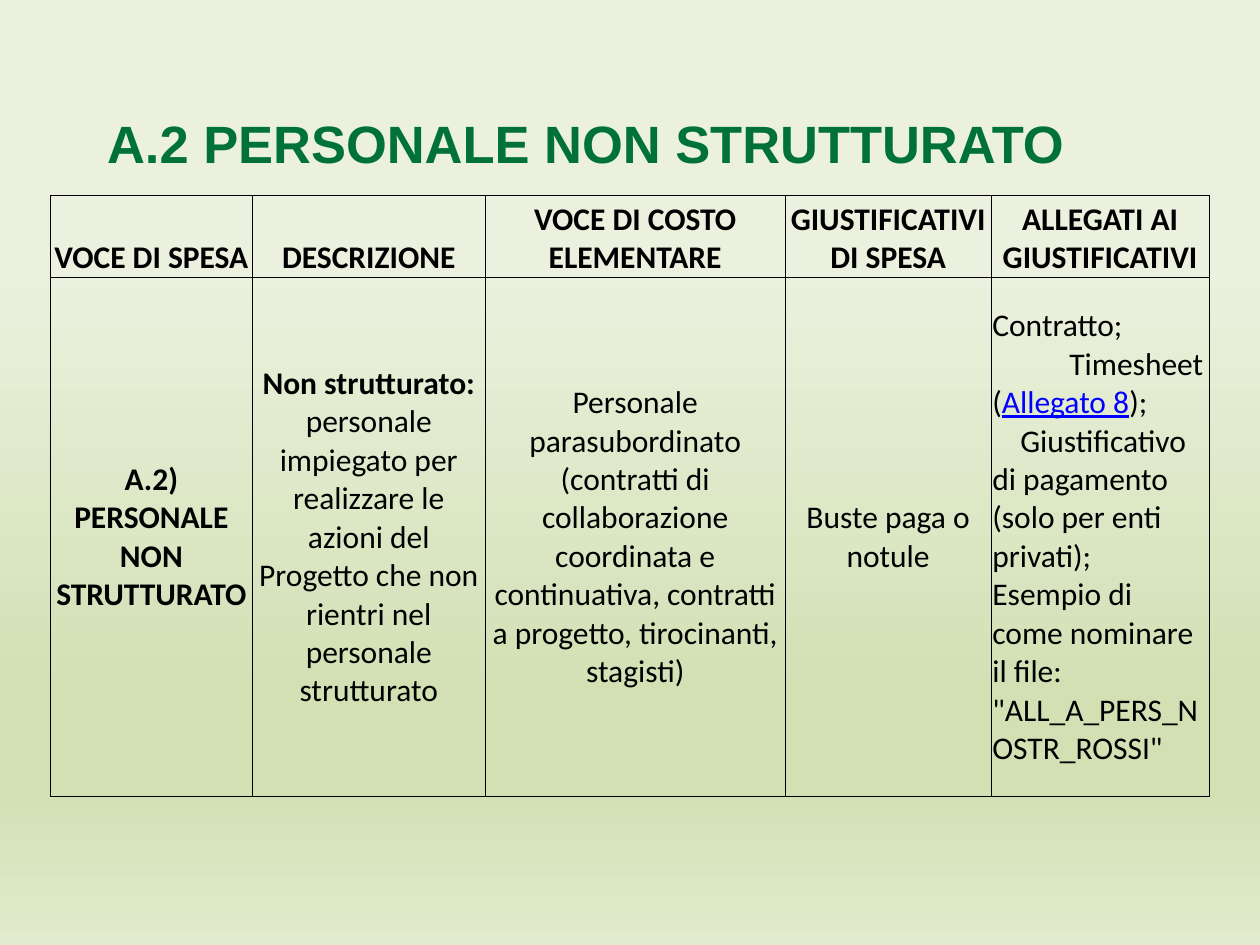
import pptx
import pptx.util
from lxml import etree
from pptx.dml.color import RGBColor
from pptx.enum.text import MSO_ANCHOR, MSO_AUTO_SIZE, PP_ALIGN
from pptx.oxml import parse_xml
from pptx.oxml.ns import nsdecls, qn

Pt = pptx.util.Pt

GREEN = RGBColor(0x00, 0x72, 0x39)
BLACK = RGBColor(0x00, 0x00, 0x00)
LINK_BLUE = RGBColor(0x00, 0x00, 0xFF)
BACKGROUND_STOPS = [
    (28, RGBColor(0xEB, 0xF1, 0xDE)),
    (74, RGBColor(0xD2, 0xE0, 0xB4)),
    (83, RGBColor(0xD2, 0xE0, 0xB4)),
    (100, RGBColor(0xE1, 0xEB, 0xCD)),
]

TITLE = "A.2 PERSONALE NON STRUTTURATO"
HEADERS = [
    "VOCE DI SPESA",
    "DESCRIZIONE",
    "VOCE DI COSTO ELEMENTARE",
    "GIUSTIFICATIVI DI SPESA",
    "ALLEGATI AI GIUSTIFICATIVI",
]
# Each paragraph is (first-line indent, runs); each run is (text, style).
EXPENSE = [(0, [("A.2) PERSONALE NON STRUTTURATO", "bold")])]
DESCRIPTION = [(0, [
    ("Non strutturato: ", "bold"),
    ("personale impiegato per realizzare le azioni del Progetto che non "
     "rientri nel personale strutturato", "plain"),
])]
COST_ITEM = [(0, [
    ("Personale parasubordinato (contratti di collaborazione coordinata e "
     "continuativa, contratti a progetto, tirocinanti, stagisti)", "plain"),
])]
RECEIPTS = [(0, [("Buste paga o notule", "plain")])]
ATTACHMENTS = [
    (0, [("Contratto;", "plain")]),
    (44, [("Timesheet (", "plain"), ("Allegato 8", "link"), (");", "plain")]),
    (16, [("Giustificativo di pagamento (solo per enti privati);", "plain")]),
    (0, [('Esempio di come nominare il file: "ALL_A_PERS_NOSTR_ROSSI"', "plain")]),
]
ROWS = [
    [[(0, [(header, "bold")])] for header in HEADERS],
    [EXPENSE, DESCRIPTION, COST_ITEM, RECEIPTS, ATTACHMENTS],
]
COLUMN_WIDTHS = [115.4, 133.1, 171.4, 117.7, 124.6]
ROW_HEIGHTS = [46.8, 296.6]
TABLE_LEFT, TABLE_TOP = 28.8, 111.6


def set_background(slide):
    fill = slide.background.fill
    fill.gradient()
    fill.gradient_angle = 270
    stops = slide.background._cSld.find(".//" + qn("a:gsLst"))
    for stop in list(stops):
        stops.remove(stop)
    for percent, color in BACKGROUND_STOPS:
        stop = etree.SubElement(stops, qn("a:gs"), pos=str(percent * 1000))
        etree.SubElement(stop, qn("a:srgbClr"), val=str(color))


def add_run(paragraph, text, font_name, size, color, bold):
    run = paragraph.add_run()
    run.text = text
    run.font.name = font_name
    run.font.size = Pt(size)
    run.font.color.rgb = color
    run.font.bold = bold
    return run


def add_borders(cell):
    properties = cell._tc.get_or_add_tcPr()
    for position, side in enumerate(("lnL", "lnR", "lnT", "lnB")):
        properties.insert(position, parse_xml(
            f'<a:{side} {nsdecls("a")} w="{Pt(0.5)}"><a:solidFill>'
            f'<a:srgbClr val="{BLACK}"/></a:solidFill></a:{side}>'))


def fill_cell(cell, paragraphs, anchor, alignment):
    cell.fill.background()
    add_borders(cell)
    cell.margin_left = cell.margin_right = cell.margin_top = Pt(0.72)
    cell.margin_bottom = 0
    cell.vertical_anchor = anchor
    for index, (indent, runs) in enumerate(paragraphs):
        frame = cell.text_frame
        paragraph = frame.add_paragraph() if index else frame.paragraphs[0]
        paragraph.alignment = alignment
        if indent:
            paragraph._p.get_or_add_pPr().set("indent", str(Pt(indent)))
        for text, style in runs:
            is_link = style == "link"
            run = add_run(paragraph, text, "Calibri", 18,
                          LINK_BLUE if is_link else BLACK, style == "bold")
            if is_link:
                run.font.underline = True


def add_title(slide):
    title = slide.shapes.title
    title.left, title.top = Pt(54), Pt(51.84)
    title.width, title.height = Pt(612), Pt(59.04)
    frame = title.text_frame
    frame.auto_size = MSO_AUTO_SIZE.NONE
    frame.vertical_anchor = MSO_ANCHOR.MIDDLE
    paragraph = frame.paragraphs[0]
    paragraph.alignment = PP_ALIGN.LEFT
    add_run(paragraph, TITLE, "Arial", 30, GREEN, True)


def add_expense_table(slide):
    table = slide.shapes.add_table(
        len(ROWS), len(HEADERS), Pt(TABLE_LEFT), Pt(TABLE_TOP),
        Pt(sum(COLUMN_WIDTHS)), Pt(sum(ROW_HEIGHTS))).table
    table.horz_banding = False
    for column, width in zip(table.columns, COLUMN_WIDTHS):
        column.width = Pt(width)
    for r, (row, height) in enumerate(zip(ROWS, ROW_HEIGHTS)):
        table.rows[r].height = Pt(height)
        anchor = MSO_ANCHOR.MIDDLE if r else MSO_ANCHOR.BOTTOM
        for c, paragraphs in enumerate(row):
            alignment = PP_ALIGN.LEFT if paragraphs is ATTACHMENTS else PP_ALIGN.CENTER
            fill_cell(table.cell(r, c), paragraphs, anchor, alignment)


def main():
    presentation = pptx.Presentation()
    presentation.slide_width, presentation.slide_height = Pt(720), Pt(540)
    slide = presentation.slides.add_slide(presentation.slide_layouts[0])
    subtitle = slide.placeholders[1]._element
    subtitle.getparent().remove(subtitle)
    set_background(slide)
    add_title(slide)
    add_expense_table(slide)
    presentation.save("out.pptx")


if __name__ == "__main__":
    main()
